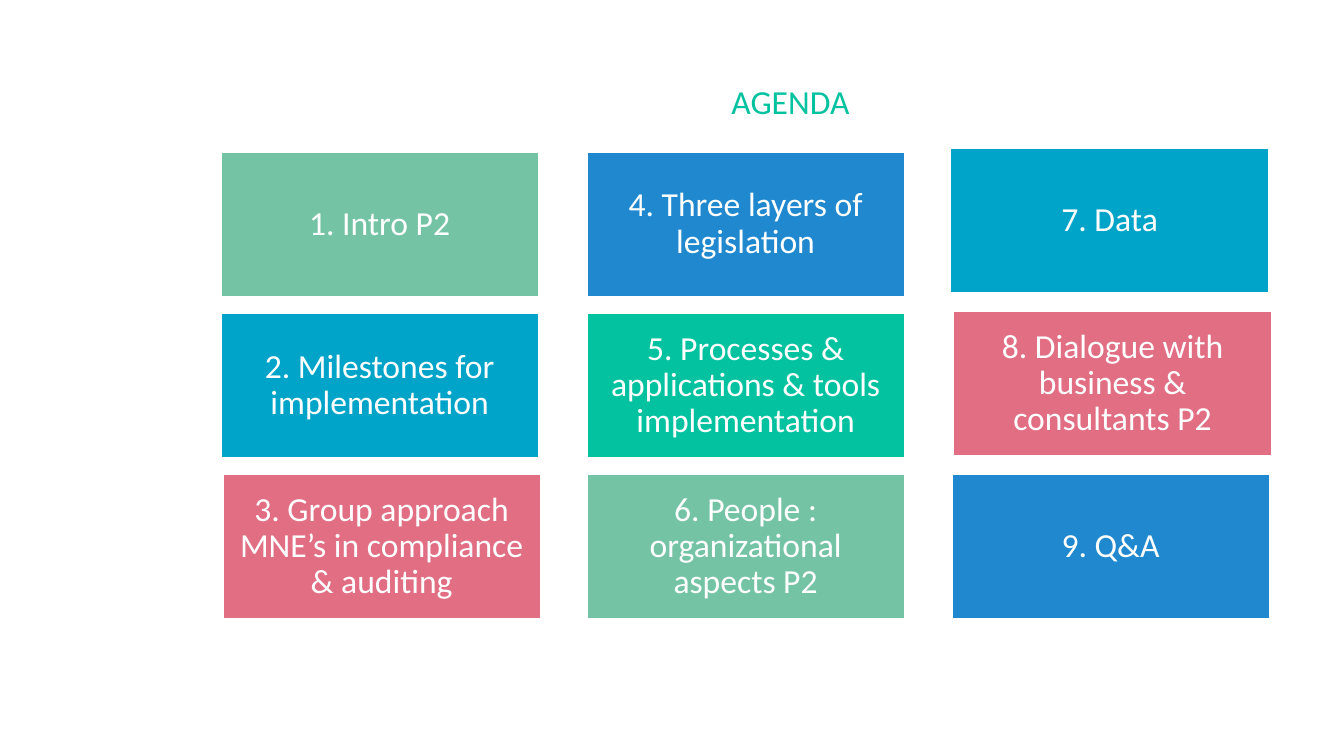
"""Build the agenda slide: a title above a three-by-three grid of topics."""
import dataclasses

import pptx
import pptx.dml.color
import pptx.enum.shapes
import pptx.enum.text
import pptx.util


@dataclasses.dataclass(frozen=True)
class Theme:
    font: str = "Calibri"
    size: int = 24
    line_spacing: float = 0.9
    white: str = "FFFFFF"
    sage: str = "75C3A5"
    cyan: str = "00A4C9"
    rose: str = "E16E83"
    blue: str = "1F88CF"
    green: str = "02C29F"


@dataclasses.dataclass(frozen=True)
class Grid:
    left: float = 2.19
    top: float = 1.51
    column_pitch: float = 3.63
    row_pitch: float = 1.6
    card_width: float = 3.15
    card_height: float = 1.43
    rows: int = 3

    def card_box(self, index, shift):
        column, row = divmod(index, self.rows)
        return (self.left + column * self.column_pitch + shift[0],
                self.top + row * self.row_pitch + shift[1],
                self.card_width, self.card_height)


def rgb(colour):
    return pptx.dml.color.RGBColor.from_string(colour)


def write_text(shape, text, *, font, size, colour, line_spacing, margin):
    frame = shape.text_frame
    frame.word_wrap = True
    frame.vertical_anchor = pptx.enum.text.MSO_ANCHOR.MIDDLE
    frame.margin_left = frame.margin_right = pptx.util.Inches(margin)
    frame.margin_top = frame.margin_bottom = pptx.util.Inches(margin)
    paragraph = frame.paragraphs[0]
    paragraph.alignment = pptx.enum.text.PP_ALIGN.CENTER
    paragraph.line_spacing = line_spacing
    run = paragraph.add_run()
    run.text = text
    run.font.name = font
    run.font.size = pptx.util.Pt(size)
    run.font.color.rgb = rgb(colour)


class AgendaSlide:
    def __init__(self, slide, theme, grid):
        self.slide = slide
        self.theme = theme
        self.grid = grid

    def label(self, shape, text, colour):
        write_text(shape, text, font=self.theme.font, size=self.theme.size,
                   colour=colour, line_spacing=self.theme.line_spacing, margin=0.08)

    def title(self, text, box):
        shape = self.slide.shapes.add_textbox(*map(pptx.util.Inches, box))
        self.label(shape, text, self.theme.green)

    def card(self, index, text, fill, shift=(0, 0)):
        box = self.grid.card_box(index, shift)
        shape = self.slide.shapes.add_shape(
            pptx.enum.shapes.MSO_SHAPE.RECTANGLE, *map(pptx.util.Inches, box))
        shape.shadow.inherit = False
        shape.fill.solid()
        shape.fill.fore_color.rgb = rgb(fill)
        shape.line.color.rgb = rgb(self.theme.white)
        shape.line.width = pptx.util.Pt(1)
        self.label(shape, text, self.theme.white)


def main():
    presentation = pptx.Presentation()
    presentation.slide_width = pptx.util.Inches(13.33)
    presentation.slide_height = pptx.util.Inches(7.5)
    slide = presentation.slides.add_slide(presentation.slide_layouts[6])
    theme = Theme()
    agenda = AgendaSlide(slide, theme, Grid())

    agenda.title("AGENDA", (1.99, 0.64, 11.7, 0.77))
    topics = [
        ("1. Intro P2", theme.sage),
        ("2. Milestones for implementation", theme.cyan),
        ("3. Group approach MNE’s in compliance & auditing", theme.rose, (0.02, 0)),
        ("4. Three layers of legislation", theme.blue),
        ("5. Processes & applications & tools implementation", theme.green),
        ("6. People : organizational aspects P2", theme.sage),
        ("7. Data", theme.cyan, (-0.02, -0.04)),
        ("8. Dialogue with business & consultants P2", theme.rose, (0.01, -0.02)),
        ("9. Q&A", theme.blue, (-0.01, 0)),
    ]
    for index, topic in enumerate(topics):
        agenda.card(index, *topic)

    presentation.save("out.pptx")


if __name__ == "__main__":
    main()
